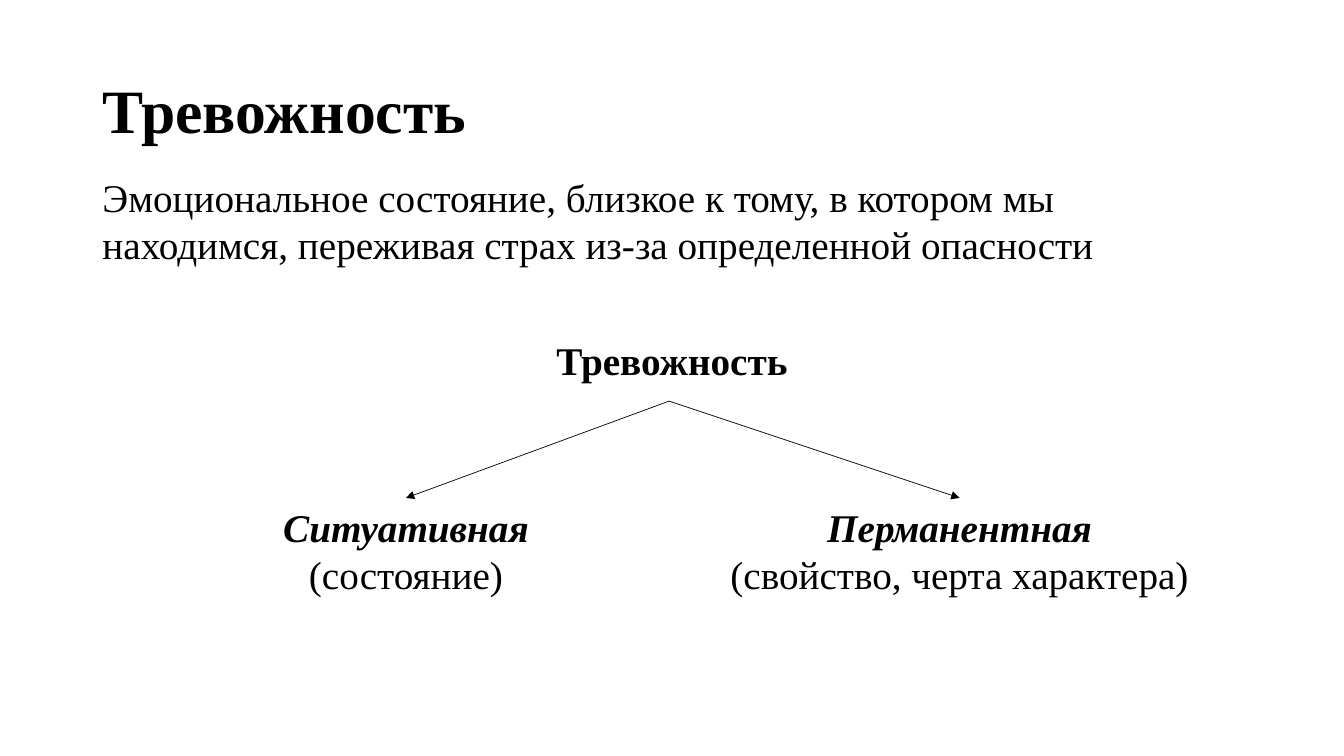
from pptx import Presentation
from pptx.dml.color import RGBColor
from pptx.enum.shapes import MSO_CONNECTOR as Link
from pptx.enum.text import MSO_ANCHOR as Anchor, MSO_AUTO_SIZE as Fit, PP_ALIGN as Align
from pptx.oxml.ns import qn
from pptx.util import Pt
from lxml.etree import SubElement

INK = "000000"
FACE = "Times New Roman"
TITLE = "Тревожность"
LEAD = ("Эмоциональное состояние, близкое к тому, в котором мы "
        "находимся, переживая страх из-за определенной опасности")
ROOT = "Тревожность"
# kind, meaning, centre x, width
KINDS = [
    ("Ситуативная", "(состояние)", 290, 191.5),
    ("Перманентная", "(свойство, черта характера)", 685.4, 345.6),
]
LEFT, WIDE = 66, 828
APEX = (478, 286.5)
KIND_TOP, KIND_HIGH = 355.7, 74.9


def color(code):
    return RGBColor.from_string(code)


def place(shape, *box):
    for name, value in zip(("left", "top", "width", "height"), box):
        setattr(shape, name, Pt(value))


def write(para, text, align, size=28, gap=0, line=1.0, **style):
    para.alignment, para.line_spacing, para.space_before = align, line, Pt(gap)
    run = para.add_run()
    run.text = text
    look = {"name": FACE, "size": Pt(size), "bold": False, "italic": False, **style}
    for name, value in look.items():
        setattr(run.font, name, value)
    run.font.color.rgb = color(INK)


def plain(para):
    """Remove the bullet and the hanging indent."""
    props = para._p.get_or_add_pPr()
    props.set("marL", "0")
    props.set("indent", "0")
    SubElement(props, qn("a:buNone"))


def arrow(slide, box):
    """Draw an arrow from the apex to the top of a box."""
    x, y = map(Pt, APEX)
    link = slide.shapes.add_connector(Link.STRAIGHT, x, y, x, y)
    link.end_connect(box, 0)
    link.line.color.rgb = color(INK)
    link.line.width = Pt(0.5)
    SubElement(link.line._get_or_add_ln(), qn("a:tailEnd"), type="triangle")
    SubElement(link._element.spPr, qn("a:effectLst"))


def main():
    deck = Presentation()
    deck.slide_width, deck.slide_height = Pt(960), Pt(540)
    slide = deck.slides.add_slide(deck.slide_layouts[1])

    title, body = slide.placeholders
    place(title, LEFT, 28.75, WIDE, 104.4)
    place(body, LEFT, 120.2, WIDE, 365.6)
    for shape, anchor in ((title, Anchor.MIDDLE), (body, Anchor.TOP)):
        shape.text_frame.vertical_anchor = anchor
        shape.text_frame.auto_size = Fit.NONE
    write(title.text_frame.paragraphs[0], TITLE, Align.LEFT, 44, line=0.9, bold=True)

    lead, root = body.text_frame.paragraphs[0], body.text_frame.add_paragraph()
    plain(lead)
    plain(root)
    write(lead, LEAD, Align.LEFT)
    write(root, ROOT, Align.CENTER, gap=53, line=0.9, bold=True)

    for kind, sense, mid, wide in KINDS:
        box = slide.shapes.add_textbox(0, 0, 0, 0)
        place(box, mid - wide / 2, KIND_TOP, wide, KIND_HIGH)
        frame = box.text_frame
        frame.word_wrap, frame.auto_size = False, Fit.SHAPE_TO_FIT_TEXT
        write(frame.paragraphs[0], kind, Align.CENTER, bold=True, italic=True)
        write(frame.add_paragraph(), sense, Align.CENTER)
        arrow(slide, box)

    deck.save("out.pptx")


if __name__ == "__main__":
    main()
